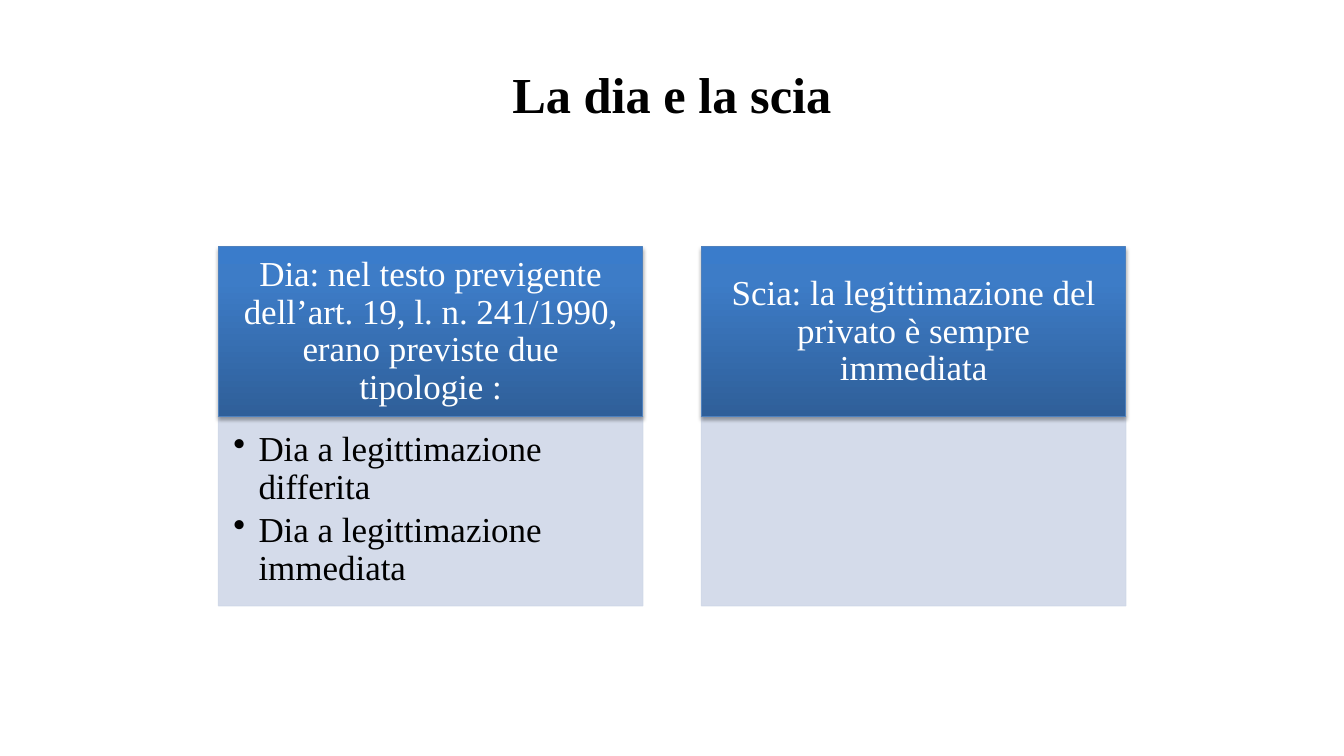
from dataclasses import dataclass

from lxml import etree
from pptx import Presentation
from pptx import util as u
from pptx.dml import color
from pptx.enum import dml, shapes, text
from pptx.oxml import ns


@dataclass(frozen=True)
class Theme:
    """Colours and type sizes of the slide."""
    font: str = "Times New Roman"
    ink: str = "000000"
    light: str = "FFFFFF"
    panel: str = "D0D8E8"
    edge: str = "4F81BD"
    gradient: tuple = ((0, "2F5F99"), (80, "3D7CC7"), (100, "3A7CCB"))
    title_size: int = 36
    body_size: int = 25


THEME = Theme()
LEFT, TOP, WIDTH, PITCH = 156, 176.4, 303.2, 345
HEAD_HEIGHT, BODY_HEIGHT = 121, 135.3
COLUMNS = (
    ("Dia: nel testo previgente dell’art. 19, l. n. 241/1990, erano previste due tipologie :",
     ("Dia a legittimazione differita", "Dia a legittimazione immediata")),
    ("Scia: la legittimazione del privato è sempre immediata", ()),
)


def add_child(parent, tag, **attributes):
    """Append a drawing element with the given attributes."""
    child = etree.SubElement(parent, ns.qn(tag))
    for name, value in attributes.items():
        child.set(name, str(value))
    return child


def add_colour(parent, value, alpha=None):
    """Append an RGB colour with an optional opacity in percent."""
    tint = add_child(parent, "a:srgbClr", val=value)
    if alpha is not None:
        add_child(tint, "a:alpha", val=alpha * 1000)


def style(para, size, value, bold=False):
    """Set the font of a paragraph's runs."""
    for span in para.runs:
        span.font.name = THEME.font
        span.font.size = u.Pt(size)
        span.font.bold = bold
        span.font.color.rgb = color.RGBColor.from_string(value)


def set_frame(frame, anchor, insets):
    """Set wrapping, anchor and insets (left, top, right, bottom)."""
    frame.word_wrap = True
    frame.vertical_anchor = anchor
    sides = ("margin_left", "margin_top", "margin_right", "margin_bottom")
    for side, inset in zip(sides, insets):
        setattr(frame, side, u.Pt(inset))


def add_box(page, left, top, height, line):
    """Add a rectangle of column width with a thin outline."""
    box = page.shapes.add_shape(shapes.MSO_SHAPE.RECTANGLE,
                                u.Pt(left), u.Pt(top), u.Pt(WIDTH), u.Pt(height))
    box.shadow.inherit = False
    box.line.width = u.Pt(0.75)
    box.line.color.rgb = color.RGBColor.from_string(line)
    return box


def add_title(page, wording):
    """Add the centred slide title."""
    box = page.shapes.add_textbox(u.Pt(48), u.Pt(21.6), u.Pt(864), u.Pt(90))
    set_frame(box.text_frame, text.MSO_ANCHOR.MIDDLE, (7.2, 3.6, 7.2, 3.6))
    para = box.text_frame.paragraphs[0]
    para.text = wording
    para.alignment = text.PP_ALIGN.CENTER
    style(para, THEME.title_size, THEME.ink, bold=True)


def add_header(page, left, wording):
    """Add a gradient header with a soft shadow."""
    box = add_box(page, left, TOP, HEAD_HEIGHT, THEME.edge)
    box.fill.gradient()
    box.fill.gradient_angle = 90
    stops = box.fill._fill._gradFill.find(ns.qn("a:gsLst"))
    for stop in list(stops):
        stops.remove(stop)
    for position, value in THEME.gradient:
        add_colour(add_child(stops, "a:gs", pos=position * 1000), value)
    effects = box._element.spPr.find(ns.qn("a:effectLst"))
    shadow = add_child(effects, "a:outerShdw", blurRad=u.Pt(3.1), dist=u.Pt(1.8),
                       dir=5400000, rotWithShape=0)
    add_colour(shadow, THEME.ink, 35)
    set_frame(box.text_frame, text.MSO_ANCHOR.MIDDLE, (14, 8, 14, 8))
    para = box.text_frame.paragraphs[0]
    para.text = wording
    para.alignment = text.PP_ALIGN.CENTER
    para.line_spacing = 0.9
    style(para, THEME.body_size, THEME.light)


def add_body(page, left, items):
    """Add a translucent panel with bulleted items."""
    box = add_box(page, left, TOP + HEAD_HEIGHT, BODY_HEIGHT, THEME.panel)
    box.fill.solid()
    box.fill.fore_color.rgb = color.RGBColor.from_string(THEME.panel)
    for tint in box._element.spPr.iter(ns.qn("a:srgbClr")):
        add_child(tint, "a:alpha", val=90000)
    frame = box.text_frame
    set_frame(frame, text.MSO_ANCHOR.TOP, (10.7, 10.7, 14.2, 16))
    if not items:
        return
    frame.text = "\n".join(items)
    for para in frame.paragraphs:
        para.level = 1
        para.alignment = text.PP_ALIGN.LEFT
        para.line_spacing = 0.9
        para.space_after = u.Pt(3.75)
        properties = para._p.get_or_add_pPr()
        properties.set("marL", str(u.Pt(18)))
        properties.set("indent", str(u.Pt(-18)))
        add_child(properties, "a:buChar", char="•")
        style(para, THEME.body_size, THEME.ink)


def main():
    """Build and save the slide."""
    deck = Presentation()
    deck.slide_width, deck.slide_height = u.Pt(960), u.Pt(540)
    page = deck.slides.add_slide(deck.slide_layouts[6])
    page.background.fill.solid()
    page.background.fill.fore_color.theme_color = dml.MSO_THEME_COLOR.BACKGROUND_1
    add_title(page, "La dia e la scia")
    for index, (heading, items) in enumerate(COLUMNS):
        left = LEFT + index * PITCH
        add_body(page, left, items)
        add_header(page, left, heading)
    deck.save("out.pptx")


if __name__ == "__main__":
    main()
